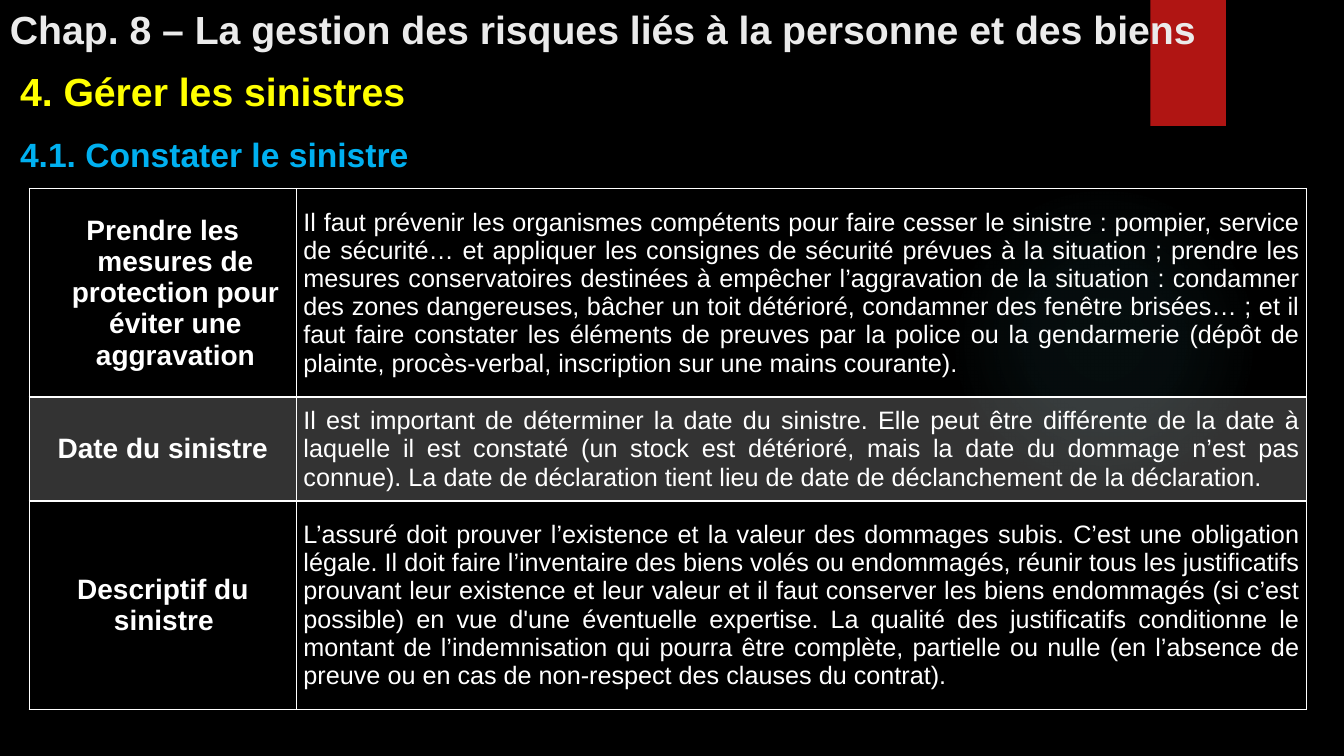
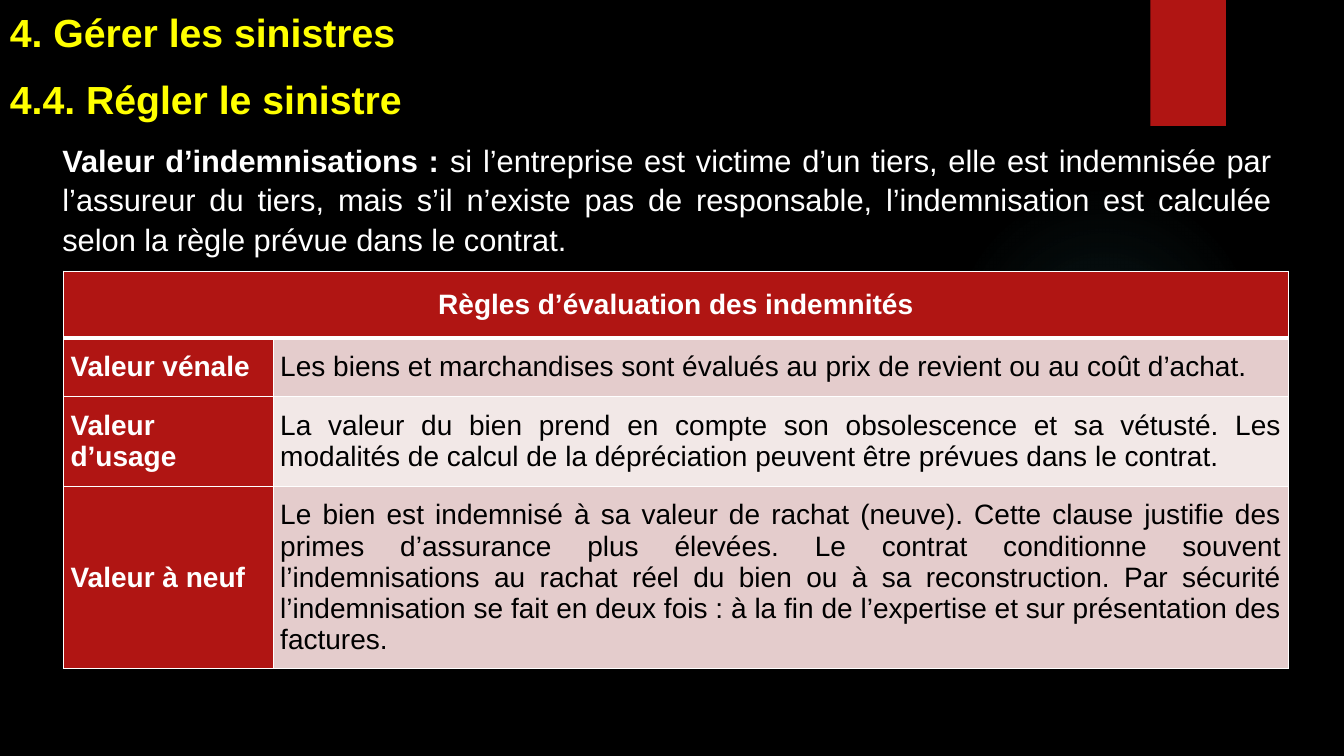
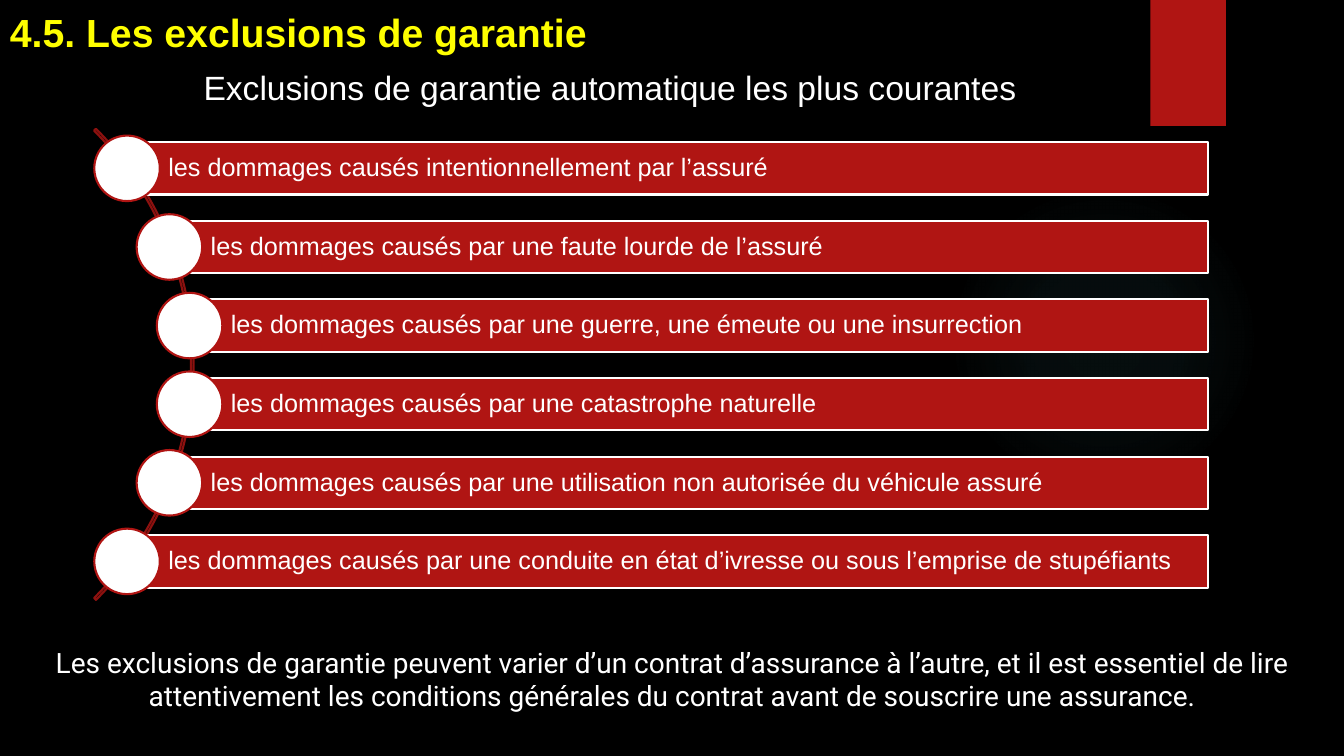
from lxml import etree
from pptx import Presentation
from pptx.dml.color import RGBColor
from pptx.enum.shapes import MSO_SHAPE as SHAPE
from pptx.enum.text import MSO_ANCHOR as ANCHOR, PP_ALIGN as ALIGN
from pptx.oxml import parse_xml
from pptx.oxml.ns import nsdecls, qn
from pptx.util import Inches, Pt

WHITE, BLACK, RED, YELLOW = "FFFFFF", "000000", "B01513", "FFFF00"
PALE_TITLE, SKY, DARK_RED, GLOW = "EBEBEB", "00B0F0", "8D110F", "50B9C1"
ROSE, PALE_ROSE = "E4CCCC", "F2E8E7"


def rgb(value):
    return RGBColor.from_string(value)


class Deck:
    """Shared style and the slide being filled."""

    font = "Arial"
    line_spacing = 1.07

    def __init__(self):
        self.prs = Presentation()
        self.prs.slide_width = Inches(13.33)
        self.prs.slide_height = Inches(7.5)
        backdrop = self.prs.slide_master.background.fill
        backdrop.solid()
        backdrop.fore_color.rgb = rgb(BLACK)
        self.slide = None

    def new_slide(self):
        self.slide = self.prs.slides.add_slide(self.prs.slide_layouts[6])
        self.glow()
        self.shape(SHAPE.RECTANGLE, 11.41, 0, 0.75, 1.25, fill=RED)

    def glow(self):
        halo = self.shape(SHAPE.OVAL, 9.41, 1.83, 3.08, 3.08)
        stops = "".join(
            f'<a:gs pos="{place * 1000}"><a:srgbClr val="{GLOW}">'
            f'<a:alpha val="{opacity * 1000}"/></a:srgbClr></a:gs>'
            for place, opacity in ((0, 7), (36, 6), (69, 0)))
        gradient = parse_xml(
            f'<a:gradFill {nsdecls("a")}><a:gsLst>{stops}</a:gsLst><a:path path="circle">'
            '<a:fillToRect l="50000" t="50000" r="50000" b="50000"/></a:path></a:gradFill>')
        properties = halo.fill._xPr
        properties.replace(properties.find(qn("a:noFill")), gradient)

    def shape(self, kind, left, top, width, height, fill=None, line=None):
        shape = self.slide.shapes.add_shape(
            kind, Inches(left), Inches(top), Inches(width), Inches(height))
        shape.shadow.inherit = False
        if fill:
            shape.fill.solid()
            shape.fill.fore_color.rgb = rgb(fill)
        else:
            shape.fill.background()
        if line:
            shape.line.color.rgb = rgb(line)
            shape.line.width = Pt(1.5)
        else:
            shape.line.fill.background()
        return shape

    def format(self, run, size, color, bold=False, font=None):
        run.font.name = font or self.font
        run.font.size = Pt(size)
        run.font.bold = bold
        run.font.color.rgb = rgb(color)

    def text(self, left, top, width, height, paragraphs, align=ALIGN.LEFT,
             anchor=ANCHOR.TOP, spacing=line_spacing, font=None):
        """Each paragraph is a list of (text, size, color, bold) runs."""
        box = self.slide.shapes.add_textbox(
            Inches(left), Inches(top), Inches(width), Inches(height))
        frame = box.text_frame
        frame.word_wrap = True
        frame.vertical_anchor = anchor
        for index, runs in enumerate(paragraphs):
            paragraph = frame.add_paragraph() if index else frame.paragraphs[0]
            paragraph.alignment = align
            paragraph.line_spacing = spacing
            if index:
                paragraph.space_before = Pt(12)
            for words, size, color, bold in runs:
                run = paragraph.add_run()
                run.text = words
                self.format(run, size, color, bold, font)

    def bar(self, left, top, width, height, words):
        bar = self.shape(SHAPE.RECTANGLE, left, top, width, height, RED, WHITE)
        frame = bar.text_frame
        frame.text = words
        frame.word_wrap = True
        frame.vertical_anchor = ANCHOR.MIDDLE
        frame.margin_left = Inches(0.41)
        frame.margin_right = frame.margin_top = frame.margin_bottom = Inches(0.05)
        paragraph = frame.paragraphs[0]
        paragraph.alignment = ALIGN.LEFT
        paragraph.line_spacing = 0.9
        self.format(paragraph.runs[0], 18, WHITE)

    def table(self, left, top, widths, heights, first_rule):
        """An empty ruled table; first_rule is the line width under row 0."""
        table = self.slide.shapes.add_table(
            len(heights), len(widths), Inches(left), Inches(top),
            Inches(sum(widths)), Inches(sum(heights))).table
        table.first_row = table.horz_banding = False
        for column, width in zip(table.columns, widths):
            column.width = Inches(width)
        for index, (row, height) in enumerate(zip(table.rows, heights)):
            row.height = Inches(height)
            for cell in row.cells:
                self.borders(cell, {"lnL": 1, "lnR": 1,
                                    "lnT": first_rule if index == 1 else 1,
                                    "lnB": first_rule if index == 0 else 1})
        return table

    def borders(self, cell, weights):
        properties = cell._tc.get_or_add_tcPr()
        for side, weight in weights.items():
            line = etree.SubElement(properties, qn(f"a:{side}"), w=str(Pt(weight)))
            solid = etree.SubElement(line, qn("a:solidFill"))
            etree.SubElement(solid, qn("a:srgbClr"), val=WHITE)

    def cell(self, cell, words, size, color=WHITE, bold=False, align=ALIGN.LEFT,
             fill=None, opacity=None, indent=None):
        cell.text_frame.text = words
        cell.vertical_anchor = ANCHOR.MIDDLE
        cell.margin_left = cell.margin_right = Inches(0.07)
        cell.margin_top = cell.margin_bottom = 0
        paragraph = cell.text_frame.paragraphs[0]
        paragraph.alignment = align
        if indent is not None:
            properties = paragraph._p.get_or_add_pPr()
            properties.set("marL", str(Inches(indent)))
            properties.set("indent", str(Inches(-0.25)))
        self.format(paragraph.runs[0], size, color, bold)
        if fill:
            cell.fill.solid()
            cell.fill.fore_color.rgb = rgb(fill)
        else:
            cell.fill.background()
        if opacity:
            tint = cell._tc.tcPr.find(qn("a:solidFill")).find(qn("a:srgbClr"))
            etree.SubElement(tint, qn("a:alpha"), val=str(opacity * 1000))


def report_slide(deck):
    deck.new_slide()
    deck.text(0, 0, 13.29, 0.57, [[(
        "Chap. 8 – La gestion des risques liés à la personne et des biens",
        28, PALE_TITLE, True)]], anchor=ANCHOR.BOTTOM)
    deck.text(0.1, 0.59, 6.39, 1.14, [
        [("4. Gérer les sinistres", 28, YELLOW, True)],
        [("4.1. Constater le sinistre", 24, SKY, True)]])

    # Steps: heading, hanging indent, row tint opacity, explanation
    steps = [
        ("Prendre les mesures de protection pour éviter une aggravation", 0.25, None,
         "Il faut prévenir les organismes compétents pour faire cesser le sinistre : pompier, "
         "service de sécurité… et appliquer les consignes de sécurité prévues à la situation ; "
         "prendre les mesures conservatoires destinées à empêcher l’aggravation de la "
         "situation : condamner des zones dangereuses, bâcher un toit détérioré, condamner des "
         "fenêtre brisées… ; et il faut faire constater les éléments de preuves par la police "
         "ou la gendarmerie (dépôt de plainte, procès-verbal, inscription sur une mains "
         "courante)."),
        ("Date du sinistre", 0.25, 20,
         "Il est important de déterminer la date du sinistre. Elle peut être différente de la "
         "date à laquelle il est constaté (un stock est détérioré, mais la date du dommage "
         "n’est pas connue). La date de déclaration tient lieu de date de déclanchement de la "
         "déclaration."),
        ("Descriptif du sinistre", 0.02, None,
         "L’assuré doit prouver l’existence et la valeur des dommages subis. C’est une "
         "obligation légale. Il doit faire l’inventaire des biens volés ou endommagés, réunir "
         "tous les justificatifs prouvant leur existence et leur valeur et il faut conserver "
         "les biens endommagés (si c’est possible) en vue d'une éventuelle expertise. La "
         "qualité des justificatifs conditionne le montant de l’indemnisation qui pourra être "
         "complète, partielle ou nulle (en l’absence de preuve ou en cas de non-respect des "
         "clauses du contrat)."),
    ]
    table = deck.table(0.29, 1.87, [2.65, 10.02], [2.07, 1.03, 2.07], first_rule=2)
    for row, (heading, indent, opacity, explanation) in enumerate(steps):
        tint = WHITE if opacity else None
        deck.cell(table.cell(row, 0), heading, 20, bold=True, align=ALIGN.CENTER,
                  fill=tint, opacity=opacity, indent=indent)
        deck.cell(table.cell(row, 1), explanation, 18, align=ALIGN.JUSTIFY,
                  fill=tint, opacity=opacity)


def settlement_slide(deck):
    deck.new_slide()
    deck.text(0, 0, 6.39, 1.21, [
        [("4. Gérer les sinistres", 28, YELLOW, True)],
        [("4.4. Régler le sinistre", 28, YELLOW, True)]])
    deck.text(0.52, 1.33, 12.19, 1.21, [[
        ("Valeur d’indemnisations : ", 22, WHITE, True),
        ("si l’entreprise est victime d’un tiers, elle est indemnisée par l’assureur du tiers, "
         "mais s’il n’existe pas de responsable, l’indemnisation est calculée selon la règle "
         "prévue dans le contrat.", 22, WHITE, False)]], align=ALIGN.JUSTIFY)

    # Valuation rules
    rules = [
        ("Valeur vénale",
         "Les biens et marchandises sont évalués au prix de revient ou au coût d’achat."),
        ("Valeur d’usage",
         "La valeur du bien prend en compte son obsolescence et sa vétusté. Les modalités de "
         "calcul de la dépréciation peuvent être prévues dans le contrat."),
        ("Valeur à neuf",
         "Le bien est indemnisé à sa valeur de rachat (neuve). Cette clause justifie des primes "
         "d’assurance plus élevées. Le contrat conditionne souvent l’indemnisations au rachat "
         "réel du bien ou à sa reconstruction. Par sécurité l’indemnisation se fait en deux "
         "fois : à la fin de l’expertise et sur présentation des factures."),
    ]
    table = deck.table(0.63, 2.69, [2.08, 10.07], [0.66, 0.58, 0.9, 1.8], first_rule=3)
    table.cell(0, 0).merge(table.cell(0, 1))
    deck.cell(table.cell(0, 0), "Règles d’évaluation des indemnités", 20, bold=True,
              align=ALIGN.CENTER, fill=RED)
    for row, (name, meaning) in enumerate(rules, start=1):
        deck.cell(table.cell(row, 0), name, 20, bold=True, fill=RED)
        deck.cell(table.cell(row, 1), meaning, 20, BLACK, align=ALIGN.JUSTIFY,
                  fill=ROSE if row % 2 else PALE_ROSE)


def exclusions_slide(deck):
    deck.new_slide()
    deck.text(0, 0, 6.39, 0.57, [[("4.5. Les exclusions de garantie", 28, YELLOW, True)]])
    deck.text(1.92, 0.59, 9.49, 0.5, [[(
        "Exclusions de garantie automatique les plus courantes", 24, WHITE, False)]])
    deck.text(0.36, 6.35, 12.62, 0.77, [[(
        "Les exclusions de garantie peuvent varier d’un contrat d’assurance à l’autre, et il "
        "est essentiel de lire attentivement les conditions générales du contrat avant de "
        "souscrire une assurance.", 20, WHITE, False)]],
        align=ALIGN.CENTER, spacing=1.0, font="Roboto")

    # Curve that carries the discs
    curve = deck.shape(SHAPE.BLOCK_ARC, -4.69, 0.31, 6.61, 6.61, line=DARK_RED)
    for index, value in enumerate((189, 27, 0.004)):
        curve.adjustments[index] = value

    # Bars start at the centre of their disc
    exclusions = [
        "les dommages causés intentionnellement par l’assuré",
        "les dommages causés par une faute lourde de l’assuré",
        "les dommages causés par une guerre, une émeute ou une insurrection",
        "les dommages causés par une catastrophe naturelle",
        "les dommages causés par une utilisation non autorisée du véhicule assuré",
        "les dommages causés par une conduite en état d’ivresse ou sous l’emprise de stupéfiants",
    ]
    upper_starts = [1.26, 1.68, 1.88]
    starts = upper_starts + upper_starts[::-1]
    right, first_top, step, bar_height, disc = 11.98, 1.41, 0.78, 0.52, 0.65
    for index, (start, exclusion) in enumerate(zip(starts, exclusions)):
        top = first_top + index * step
        deck.bar(start, top, right - start, bar_height, exclusion)
        deck.shape(SHAPE.OVAL, start - disc / 2, top + (bar_height - disc) / 2,
                   disc, disc, WHITE, RED)


def main():
    deck = Deck()
    report_slide(deck)
    settlement_slide(deck)
    exclusions_slide(deck)
    deck.prs.save("out.pptx")


if __name__ == "__main__":
    main()
